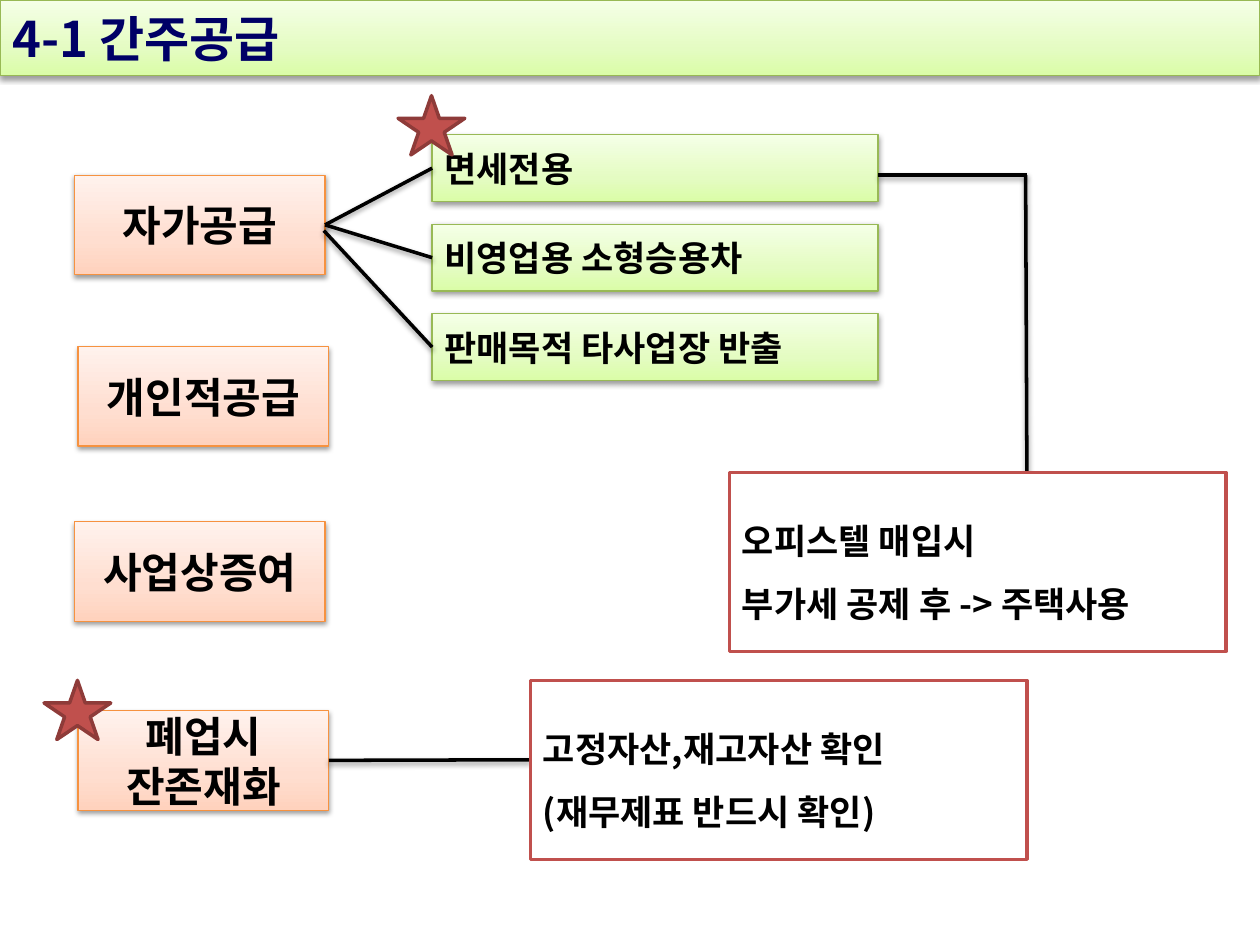
from dataclasses import dataclass
from typing import Optional

from lxml.etree import SubElement
from pptx import Presentation
from pptx.dml.color import RGBColor
from pptx.enum.shapes import MSO_CONNECTOR as Connector, MSO_SHAPE as Shape
from pptx.enum.text import MSO_ANCHOR as Anchor, MSO_AUTO_SIZE as AutoSize, PP_ALIGN as Align
from pptx.oxml.ns import qn
from pptx.util import Inches, Pt

FONT = "Noto Sans CJK KR"
COLORS = {
    "title": "000066", "text": "000000", "paper": "FFFFFF",
    "green_line": "98B955", "orange_line": "F69240",
    "red": "C0504D", "star_line": "8E3B39",
}
# Gradient stops: position in percent and colour, from bottom to top
GRADIENTS = {
    "green": ((0, "DAFDA7"), (35, "E4FCC2"), (100, "F5FFE7")),
    "orange": ((0, "FFD2BD"), (35, "FFDED0"), (100, "FFF2ED")),
}


@dataclass(frozen=True)
class BoxStyle:
    width: float
    height: float
    size: int
    line: str
    line_width: float
    gradient: Optional[str] = None
    align: Align = Align.LEFT
    spacing: Optional[float] = None
    color: str = "text"


@dataclass(frozen=True)
class Box:
    left: float
    top: float
    lines: tuple[str, ...]


@dataclass(frozen=True)
class Link:
    start: tuple[float, float]
    end: tuple[float, float]
    start_box: Optional[object] = None
    end_box: Optional[object] = None


TITLE = BoxStyle(10, 0.6, 28, "green_line", 0.75, "green", color="title")
CATEGORY = BoxStyle(1.99, 0.79, 24, "orange_line", 0.75, "orange", Align.CENTER)
CASE = BoxStyle(3.54, 0.53, 20, "green_line", 0.75, "green")
NOTE = BoxStyle(3.94, 1.42, 20, "red", 2, spacing=1.5)


def rgb(name: str) -> RGBColor:
    return RGBColor.from_string(COLORS[name])


def set_line(part, color: str, width: float) -> None:
    part.line.color.rgb = rgb(color)
    part.line.width = Pt(width)


def add_shadow(properties) -> None:
    effects = properties.find(qn("a:effectLst"))
    if effects is None:
        effects = SubElement(properties, qn("a:effectLst"))
    outer = SubElement(effects, qn("a:outerShdw"), blurRad=str(Pt(3.1)),
                       dist=str(Pt(1.6)), dir="5400000", rotWithShape="0")
    black = SubElement(outer, qn("a:srgbClr"), val=COLORS["text"])
    SubElement(black, qn("a:alpha"), val="38000")


def set_gradient(shape, name: str) -> None:
    properties = shape._element.spPr
    gradient = SubElement(properties, qn("a:gradFill"), rotWithShape="1")
    stops = SubElement(gradient, qn("a:gsLst"))
    for position, color in GRADIENTS[name]:
        stop = SubElement(stops, qn("a:gs"), pos=str(position * 1000))
        SubElement(stop, qn("a:srgbClr"), val=color)
    SubElement(gradient, qn("a:lin"), ang="16200000", scaled="0")
    properties.replace(properties.find(qn("a:solidFill")), gradient)


def write_text(shape, lines: tuple[str, ...], style: BoxStyle) -> None:
    frame = shape.text_frame
    frame_format = {"word_wrap": True, "auto_size": AutoSize.NONE,
                    "vertical_anchor": Anchor.MIDDLE}
    for attribute, value in frame_format.items():
        setattr(frame, attribute, value)
    font_format = {"name": FONT, "size": Pt(style.size), "bold": True}
    for index, line in enumerate(lines):
        paragraph = frame.add_paragraph() if index else frame.paragraphs[0]
        paragraph.alignment = style.align
        paragraph.line_spacing = style.spacing
        run = paragraph.add_run()
        run.text = line
        for attribute, value in font_format.items():
            setattr(run.font, attribute, value)
        run.font.color.rgb = rgb(style.color)
        SubElement(run.font._element, qn("a:ea"), typeface=FONT)


def format_box(shape, box: Box, style: BoxStyle):
    place = {"left": box.left, "top": box.top,
             "width": style.width, "height": style.height}
    for attribute, value in place.items():
        setattr(shape, attribute, Inches(value))
    shape.fill.solid()
    shape.fill.fore_color.rgb = rgb("paper")
    set_line(shape, style.line, style.line_width)
    shape.shadow.inherit = False
    if style.gradient:
        set_gradient(shape, style.gradient)
        add_shadow(shape._element.spPr)
    write_text(shape, box.lines, style)
    return shape


def add_box(slide, box: Box, style: BoxStyle):
    return format_box(slide.shapes.add_shape(Shape.RECTANGLE, 0, 0, 0, 0), box, style)


def add_link(slide, link: Link) -> None:
    ends = [Inches(value) for value in link.start + link.end]
    connector = slide.shapes.add_connector(Connector.STRAIGHT, *ends)
    if link.start_box is not None:
        connector.begin_connect(link.start_box, 1)
    if link.end_box is not None:
        connector.end_connect(link.end_box, 3)
    set_line(connector, "text", 2)
    add_shadow(connector._element.spPr)


def add_star(slide, left: float, top: float) -> None:
    star = slide.shapes.add_shape(Shape.STAR_5_POINT, Inches(left), Inches(top),
                                  Inches(0.53), Inches(0.47))
    star.fill.solid()
    star.fill.fore_color.rgb = rgb("red")
    set_line(star, "star_line", 2)
    star.shadow.inherit = False


def main() -> None:
    deck = Presentation()
    deck.slide_width, deck.slide_height = Inches(10), Inches(7.5)
    slide = deck.slides.add_slide(deck.slide_layouts[5])

    # Title bar
    format_box(slide.shapes.title, Box(0, 0, ("4-1 간주공급",)), TITLE)

    # Kinds of deemed supply
    categories = (
        Box(0.59, 1.39, ("자가공급",)),
        Box(0.62, 2.75, ("개인적공급",)),
        Box(0.59, 4.14, ("사업상증여",)),
        Box(0.62, 5.64, ("폐업시", "잔존재화")),
    )
    self_supply, *_, closure = [add_box(slide, box, CATEGORY) for box in categories]

    # Cases of self-supply
    case_names = ("면세전용", "비영업용 소형승용차", "판매목적 타사업장 반출")
    exempt_use, small_car, transfer = [
        add_box(slide, Box(3.43, 1.07 + 0.71 * row, (name,)), CASE)
        for row, name in enumerate(case_names)
    ]

    # Links from categories to cases and notes
    links = (
        Link((3.43, 1.34), (2.58, 1.78), exempt_use, self_supply),
        Link((3.43, 2.05), (2.58, 1.78), small_car, self_supply),
        Link((3.43, 2.76), (2.57, 1.83), transfer),
        Link((8.15, 1.39), (6.97, 1.39)),
        Link((8.15, 3.75), (8.14, 1.39)),
        Link((4.21, 6.03), (2.6, 6.04), end_box=closure),
    )
    for link in links:
        add_link(slide, link)

    # Stars on the key items
    for left, top in ((0.35, 5.4), (3.16, 0.76)):
        add_star(slide, left, top)

    # Notes
    notes = (
        Box(5.79, 3.75, ("오피스텔 매입시", "부가세 공제 후 -> 주택사용")),
        Box(4.21, 5.4, ("고정자산,재고자산 확인", "(재무제표 반드시 확인)")),
    )
    for note in notes:
        add_box(slide, note, NOTE)

    deck.save("out.pptx")


if __name__ == "__main__":
    main()
